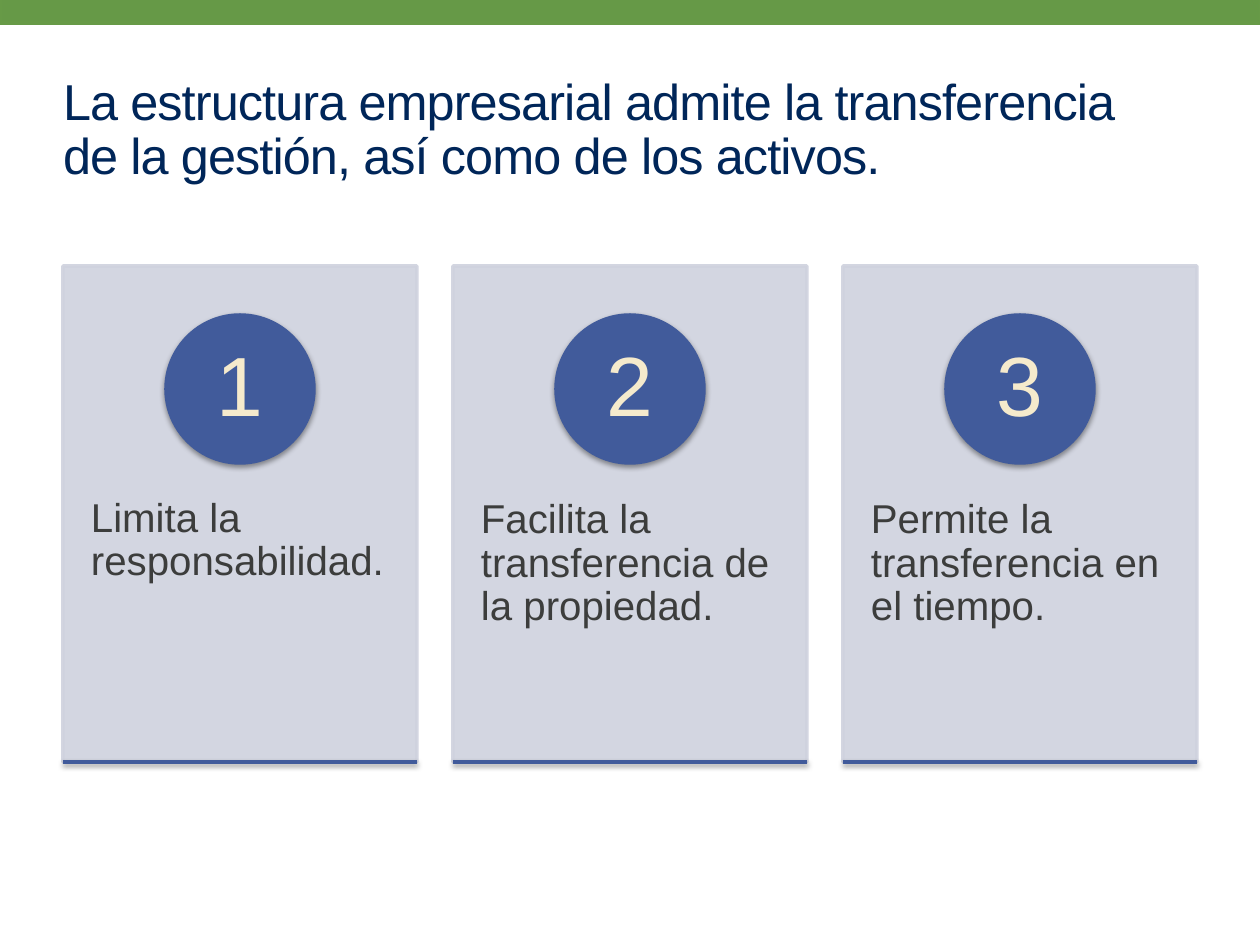
from lxml import etree
from pptx import Presentation
from pptx.dml.color import RGBColor
from pptx.enum.shapes import MSO_CONNECTOR, MSO_SHAPE
from pptx.enum.text import MSO_ANCHOR, PP_ALIGN
from pptx.oxml.ns import qn
from pptx.util import Emu, Pt

RECT, OVAL = MSO_SHAPE.RECTANGLE, MSO_SHAPE.OVAL
STRAIGHT = MSO_CONNECTOR.STRAIGHT
TOP, MIDDLE = MSO_ANCHOR.TOP, MSO_ANCHOR.MIDDLE
LEFT, CENTER = PP_ALIGN.LEFT, PP_ALIGN.CENTER

GREEN = RGBColor(0x66, 0x99, 0x47)
EDGE = RGBColor(0x67, 0x9A, 0x47)
NAVY = RGBColor(0x00, 0x26, 0x59)
BLUE = RGBColor(0x41, 0x5B, 0x9B)
PALE = RGBColor(0xCF, 0xD2, 0xDE)
CREAM = RGBColor(0xF5, 0xEA, 0xCC)
GRAY = RGBColor(0x3C, 0x3D, 0x3C)

FONT = "Arial"
SCALE = 914400 // 126
MARGIN, PITCH, WIDTH = 63, 390, 354
CARD_TOP, CARD_H = 266, 496
DISC_TOP, DISC = 315, 148
TEXT_TOP, TEXT_H = 454, 297

TITLE = "La estructura empresarial admite la transferencia \vde la gestión, así como de los activos."
POINTS = [
    "Limita la responsabilidad.",
    "Facilita la transferencia de la propiedad.",
    "Permite la transferencia en el tiempo.",
]


def px(*vals):
    return [Emu(v * SCALE) for v in vals]


def write(shape, text, size, color, align=LEFT, anchor=TOP, pad=(0, 0)):
    """Set the text; pad holds the side and the top/bottom insets in px."""
    frame = shape.text_frame
    frame.word_wrap = True
    frame.vertical_anchor = anchor
    frame.margin_left = frame.margin_right = px(pad[0])[0]
    frame.margin_top = frame.margin_bottom = px(pad[1])[0]
    frame.text = text
    para = frame.paragraphs[0]
    para.alignment = align
    para.line_spacing = 0.9
    for run in para.runs:
        run.font.name = FONT
        run.font.size = Pt(size)
        run.font.color.rgb = color


def add_box(slide, kind, box, fill, edge):
    shape = slide.shapes.add_shape(kind, *px(*box))
    shape.shadow.inherit = False
    shape.fill.solid()
    shape.fill.fore_color.rgb = fill
    shape.line.color.rgb = edge
    shape.line.width = Pt(2)
    return shape


def fade(shape, percent):
    """Make the fill and the line partly transparent."""
    for color in shape.element.spPr.iter(qn("a:srgbClr")):
        etree.SubElement(color, qn("a:alpha"), val=str(percent * 1000))


def add_shadow(shape):
    props = shape.element.spPr
    effects = props.find(qn("a:effectLst"))
    if effects is None:
        effects = etree.SubElement(props, qn("a:effectLst"))
    outer = etree.SubElement(effects, qn("a:outerShdw"), blurRad=str(Pt(3.1)),
                             dist=str(Pt(1.6)), dir="5400000", rotWithShape="0")
    color = etree.SubElement(outer, qn("a:srgbClr"), val="000000")
    etree.SubElement(color, qn("a:alpha"), val="38000")


def add_rule(slide, left, top, width):
    rule = slide.shapes.add_connector(STRAIGHT, *px(left, top, left + width, top))
    rule.line.color.rgb = BLUE
    rule.line.width = Pt(2)
    add_shadow(rule)


def add_card(slide, left, num, text):
    card = add_box(slide, RECT, (left, CARD_TOP, WIDTH, CARD_H), PALE, PALE)
    fade(card, 90)
    label = slide.shapes.add_textbox(*px(left, TEXT_TOP, WIDTH, TEXT_H))
    write(label, text, 23, GRAY, pad=(28, 45))
    mid = left + (WIDTH - DISC) // 2
    disc = add_box(slide, OVAL, (mid, DISC_TOP, DISC, DISC), BLUE, BLUE)
    add_shadow(disc)
    write(disc, str(num), 48, CREAM, CENTER, MIDDLE, (11, 1))
    add_rule(slide, left, CARD_TOP + CARD_H, WIDTH)


def add_title(slide):
    title = slide.shapes.title
    title.left, title.top, title.width, title.height = px(MARGIN, 66, 1134, 130)
    write(title, TITLE, 28.8, NAVY, anchor=MIDDLE)
    for run in title.text_frame.paragraphs[0].runs:
        run.font._element.set("spc", "-50")


def main():
    prs = Presentation()
    prs.slide_width, prs.slide_height = px(1260, 945)
    slide = prs.slides.add_slide(prs.slide_layouts[5])
    add_box(slide, RECT, (0, -2, 1261, 25), GREEN, EDGE)
    add_title(slide)
    for i, text in enumerate(POINTS):
        add_card(slide, MARGIN + i * PITCH, i + 1, text)
    prs.save("out.pptx")


if __name__ == "__main__":
    main()
